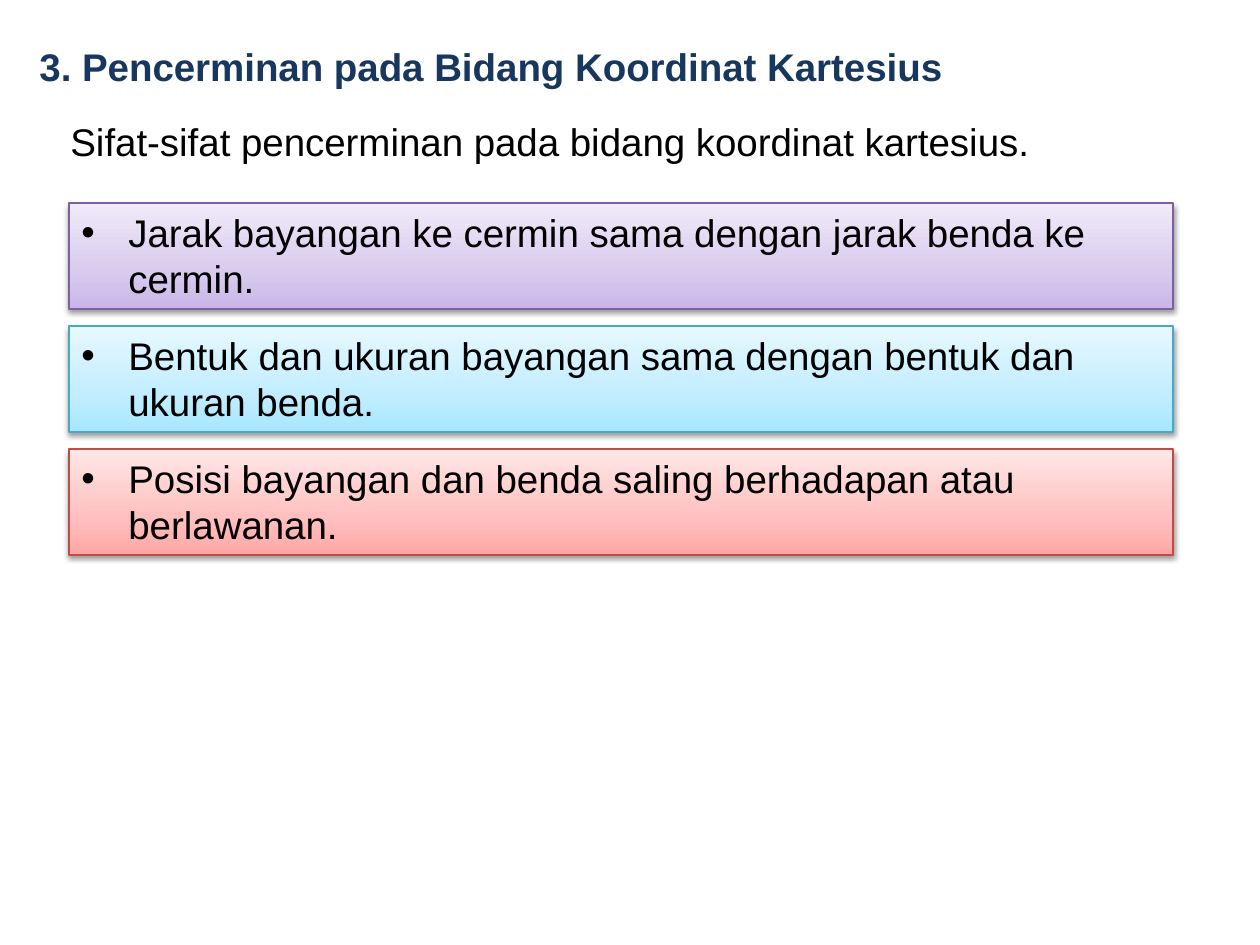
from copy import deepcopy

from lxml import etree
from pptx import Presentation
from pptx.dml.color import RGBColor
from pptx.enum.shapes import MSO_SHAPE
from pptx.enum.text import MSO_ANCHOR, MSO_AUTO_SIZE, PP_ALIGN
from pptx.oxml import parse_xml
from pptx.oxml.ns import qn
from pptx.util import Emu, Pt

RECTANGLE = MSO_SHAPE.RECTANGLE
TOP = MSO_ANCHOR.TOP
LEFT = PP_ALIGN.LEFT
GROW = MSO_AUTO_SIZE.SHAPE_TO_FIT_TEXT

PX_PER_INCH = 126
FONT = "Arial"
TEXT_SIZE = Pt(22)
HEADING_INDENT = 23
BULLET_INDENT = 47

NAVY = RGBColor(0x17, 0x37, 0x5E)
BLACK = RGBColor(0, 0, 0)
PURPLE_LINE = RGBColor(0x7D, 0x60, 0xA0)
PURPLE_FILL = (RGBColor(0xC9, 0xB5, 0xE8), RGBColor(0xD8, 0xCB, 0xEE), RGBColor(0xF0, 0xEA, 0xF9))
AQUA_LINE = RGBColor(0x46, 0xAA, 0xC5)
AQUA_FILL = (RGBColor(0xA7, 0xE6, 0xFF), RGBColor(0xC1, 0xED, 0xFF), RGBColor(0xE7, 0xF8, 0xFF))
RED_LINE = RGBColor(0xBF, 0x4C, 0x48)
RED_FILL = (RGBColor(0xFF, 0xA6, 0xA5), RGBColor(0xFF, 0xC0, 0xBF), RGBColor(0xFF, 0xE7, 0xE7))
STOP_POSITIONS = (0, 0.35, 1)

SHADOW = (
    '<a:outerShdw xmlns:a="http://schemas.openxmlformats.org/drawingml/2006/main"'
    ' blurRad="40000" dist="20000" dir="5400000" rotWithShape="0">'
    '<a:srgbClr val="000000"><a:alpha val="38000"/></a:srgbClr></a:outerShdw>'
)

PROPERTIES = (
    ("Jarak bayangan ke cermin sama dengan jarak benda ke cermin.", PURPLE_LINE, PURPLE_FILL),
    ("Bentuk dan ukuran bayangan sama dengan bentuk dan ukuran benda.", AQUA_LINE, AQUA_FILL),
    ("Posisi bayangan dan benda saling berhadapan atau berlawanan.", RED_LINE, RED_FILL),
)


def px(length):
    return Emu(round(length * 914400 / PX_PER_INCH))


def write_text(shape, text, color, indent, bold=False, bullet=False):
    frame = shape.text_frame
    frame.word_wrap = bullet
    frame.auto_size = GROW
    frame.vertical_anchor = TOP
    para = frame.paragraphs[0]
    para.text = text
    para.alignment = LEFT
    properties = para._p.get_or_add_pPr()
    properties.set("marL", str(px(indent)))
    properties.set("indent", str(-px(indent) if bullet else 0))
    if bullet:
        etree.SubElement(properties, qn("a:buFont")).set("typeface", FONT)
        etree.SubElement(properties, qn("a:buChar")).set("char", "•")
    para.font.name = FONT
    para.font.size = TEXT_SIZE
    para.font.bold = bold
    para.font.color.rgb = color


def add_heading(page, box, text, color, bold=False):
    heading = page.shapes.add_textbox(*map(px, box))
    write_text(heading, text, color, HEADING_INDENT, bold=bold)


def fill_gradient(shape, colors):
    shape.fill.gradient()
    shape.fill.gradient_angle = 90
    stop_list = shape._element.spPr.find(".//" + qn("a:gsLst"))
    stop_list.insert(1, deepcopy(stop_list[0]))
    for stop, position, color in zip(shape.fill.gradient_stops, STOP_POSITIONS, colors):
        stop.position = position
        stop.color.rgb = color


def add_panel(page, box, text, line_color, fill_colors):
    panel = page.shapes.add_shape(RECTANGLE, *map(px, box))
    fill_gradient(panel, fill_colors)
    panel.line.color.rgb = line_color
    panel.line.width = Pt(0.75)
    panel.shadow.inherit = False
    panel._element.spPr.find(qn("a:effectLst")).append(parse_xml(SHADOW))
    write_text(panel, text, BLACK, BULLET_INDENT, bullet=True)


def add_property_list(page, box, gap):
    left, top, width, height = box
    count = len(PROPERTIES)
    panel_height = (height - gap * (count - 1)) // count
    for index, (text, line_color, fill_colors) in enumerate(PROPERTIES):
        panel_top = top + index * (panel_height + gap)
        add_panel(page, (left, panel_top, width, panel_height), text, line_color, fill_colors)


def main():
    deck = Presentation()
    deck.slide_width = px(1260)
    deck.slide_height = px(945)
    page = deck.slides.add_slide(deck.slide_layouts[6])
    add_heading(page, (4, 37, 964, 59), "3. Pencerminan pada Bidang Koordinat Kartesius", NAVY, bold=True)
    add_property_list(page, (69, 203, 1104, 352), 17)
    add_heading(page, (35, 112, 1021, 59), "Sifat-sifat pencerminan pada bidang koordinat kartesius.", BLACK)
    deck.save("out.pptx")


if __name__ == "__main__":
    main()
